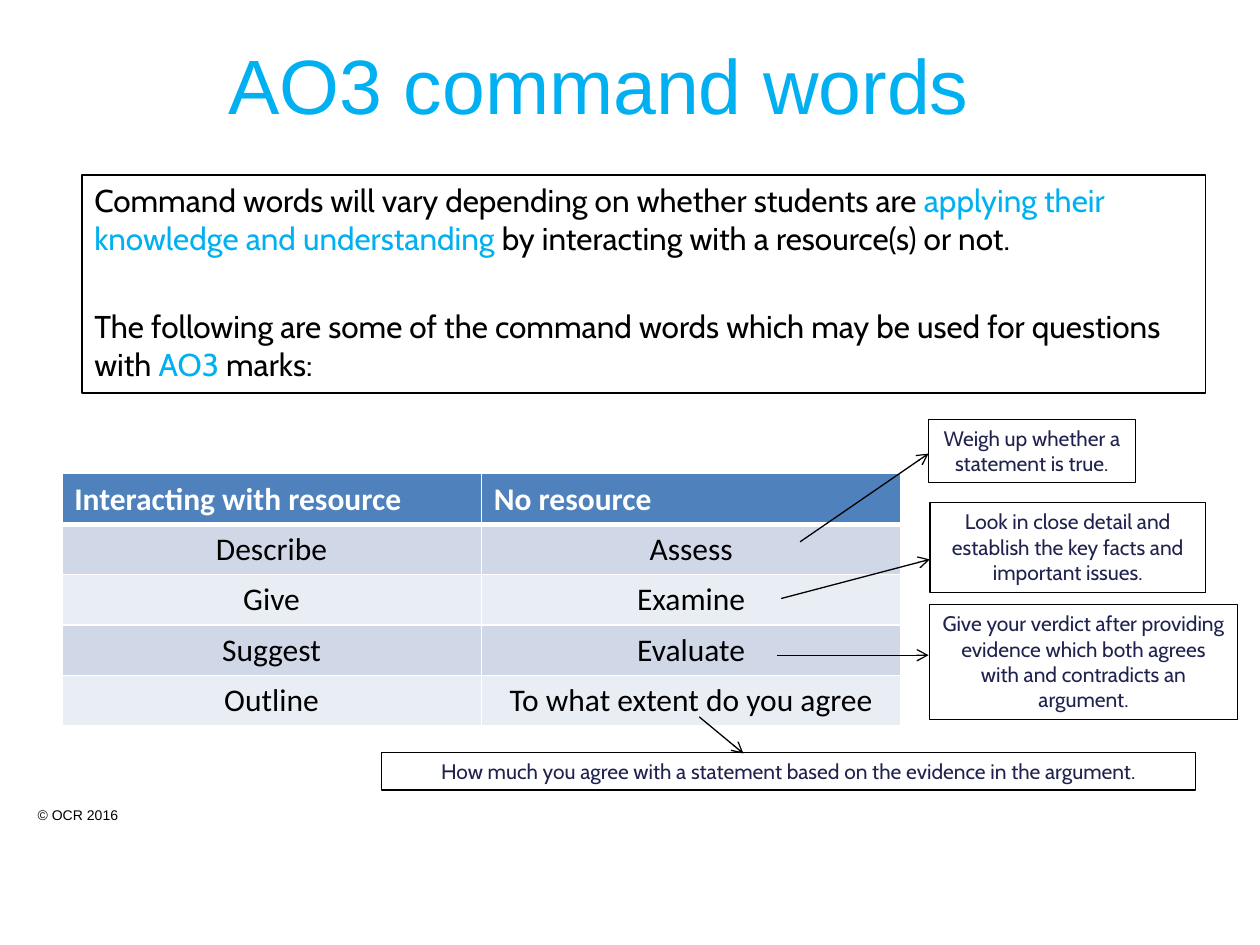
"""Build the AO3 command words slide."""
from lxml import etree
from pptx import Presentation
from pptx import util as u
from pptx.dml.color import RGBColor
from pptx.enum import shapes, text
from pptx.oxml.ns import qn

COLOURS = {
    "black": "000000", "white": "FFFFFF", "accent": "00B0F0", "navy": "1F224E",
    "header": "4F81BD", "band_dark": "D0D8E8", "band_light": "E9EDF4",
}


def rgb(name):
    """Return the named colour."""
    return RGBColor.from_string(COLOURS[name])


def write(paragraph, wording, *, font, size, colour="black", bold=False, align=text.PP_ALIGN.LEFT):
    """Add a formatted run to a paragraph."""
    paragraph.alignment = align
    run = paragraph.add_run()
    run.text = wording
    run.font.name = font
    run.font.size = u.Pt(size)
    run.font.bold = bold
    run.font.color.rgb = rgb(colour)


def add_border(cell, side, width):
    """Draw one white cell border."""
    border = etree.SubElement(cell._tc.get_or_add_tcPr(), qn(f"a:{side}"), w=str(u.Pt(width)))
    fill = etree.SubElement(border, qn("a:solidFill"))
    etree.SubElement(fill, qn("a:srgbClr"), val=COLOURS["white"])


class SlideBuilder:
    """Hold the style and the current slide."""

    heading_font, body_font, table_font = "Arial", "Cabin", "Calibri"
    line_width = u.Pt(0.75)

    def __init__(self, slide):
        """Keep the slide to draw on."""
        self.slide = slide

    def title(self, wording, left, top, width, height):
        """Place and format the title."""
        heading = self.slide.shapes.title
        heading.left, heading.top = u.Inches(left), u.Inches(top)
        heading.width, heading.height = u.Inches(width), u.Inches(height)
        heading.text_frame.vertical_anchor = text.MSO_ANCHOR.MIDDLE
        write(heading.text_frame.paragraphs[0], wording, font=self.heading_font, size=44,
              colour="accent", align=text.PP_ALIGN.CENTER)

    def label(self, wording, left, top, width, height):
        """Add small unframed text."""
        caption = self.slide.shapes.add_textbox(*map(u.Inches, (left, top, width, height)))
        caption.text_frame.word_wrap = True
        write(caption.text_frame.paragraphs[0], wording, font=self.heading_font, size=8)

    def frame(self, left, top, width, height, fill=None):
        """Add an outlined box and return its text frame."""
        box = self.slide.shapes.add_shape(
            shapes.MSO_SHAPE.RECTANGLE, *map(u.Inches, (left, top, width, height)))
        box.shadow.inherit = False
        if fill:
            box.fill.solid()
            box.fill.fore_color.rgb = rgb(fill)
        else:
            box.fill.background()
        box.line.color.rgb = rgb("black")
        box.line.width = self.line_width
        box.text_frame.word_wrap = True
        box.text_frame.vertical_anchor = text.MSO_ANCHOR.TOP
        return box.text_frame

    def introduction(self, passages, *bounds):
        """Add framed paragraphs made of coloured runs."""
        body = self.frame(*bounds)
        for index, passage in enumerate(passages):
            paragraph = body.add_paragraph() if index else body.paragraphs[0]
            paragraph.space_before = u.Pt(28.5 if index else 0)
            for wording, colour in passage:
                write(paragraph, wording, font=self.body_font, size=18, colour=colour)

    def definition(self, wording, *bounds, fill=None):
        """Add a framed explanation of a command word."""
        body = self.frame(*bounds, fill=fill)
        write(body.paragraphs[0], wording, font=self.body_font, size=12, colour="navy",
              align=text.PP_ALIGN.CENTER)

    def arrow(self, x1, y1, x2, y2):
        """Connect a command word to its definition."""
        pointer = self.slide.shapes.add_connector(
            shapes.MSO_CONNECTOR.STRAIGHT, *map(u.Inches, (x1, y1, x2, y2)))
        pointer.line.color.rgb = rgb("black")
        pointer.line.width = self.line_width
        etree.SubElement(pointer.line._get_or_add_ln(), qn("a:tailEnd"), type="arrow")
        etree.SubElement(pointer._element.spPr, qn("a:effectLst"))

    def table(self, rows, left, top, width, row_height):
        """Add the banded table of command words."""
        grid = self.slide.shapes.add_table(
            len(rows), len(rows[0]),
            *map(u.Inches, (left, top, width, row_height * len(rows)))).table
        for r, row in enumerate(rows):
            header = r == 0
            band = "header" if header else "band_dark" if r % 2 else "band_light"
            for c, wording in enumerate(row):
                cell = grid.cell(r, c)
                for side, border in (("lnL", 1), ("lnR", 1), ("lnT", 3 if r == 1 else 1),
                                     ("lnB", 3 if header else 1)):
                    add_border(cell, side, border)
                cell.fill.solid()
                cell.fill.fore_color.rgb = rgb(band)
                write(cell.text_frame.paragraphs[0], wording, font=self.table_font, size=18,
                      bold=header, colour="white" if header else "black",
                      align=text.PP_ALIGN.LEFT if header else text.PP_ALIGN.CENTER)


def main():
    """Compose and save the slide."""
    deck = Presentation()
    deck.slide_width, deck.slide_height = u.Inches(10), u.Inches(7.5)
    page = SlideBuilder(deck.slides.add_slide(deck.slide_layouts[5]))

    page.label("© OCR 2016", 0.2, 6.35, 1.89, 0.24)
    page.title("AO3 command words", 0, 0.29, 9.51, 0.75)
    page.introduction([
        [("Command words will vary depending on whether students are ", "black"),
         ("applying their knowledge and understanding", "accent"),
         (" by interacting with a resource(s) or not.", "black")],
        [("The following are some of the command words which may be used for questions with ",
          "black"),
         ("AO3 ", "accent"), ("marks:", "black")],
    ], 0.65, 1.39, 8.92, 1.73)
    page.table([
        ("Interacting with resource", "No resource"),
        ("Describe", "Assess"),
        ("Give", "Examine"),
        ("Suggest", "Evaluate"),
        ("Outline", "To what extent do you agree"),
    ], 0.49, 3.76, 6.66, 0.4)

    page.definition("Weigh up whether a statement is true.", 7.37, 3.33, 1.64, 0.5)
    page.definition("Look in close detail and establish the key facts and important issues.",
                    7.38, 3.99, 2.19, 0.71)
    page.definition("Give your verdict after providing evidence which both agrees with and "
                    "contradicts an argument.", 7.38, 4.8, 2.44, 0.91)
    page.definition("How much you agree with a statement based on the evidence in the argument.",
                    3.03, 5.97, 6.46, 0.3, fill="white")

    for ends in ((6.35, 4.3, 7.37, 3.6), (6.2, 4.75, 7.38, 4.44),
                 (6.17, 5.2, 7.37, 5.2), (5.55, 5.69, 5.9, 5.98)):
        page.arrow(*ends)
    deck.save("out.pptx")


if __name__ == "__main__":
    main()
